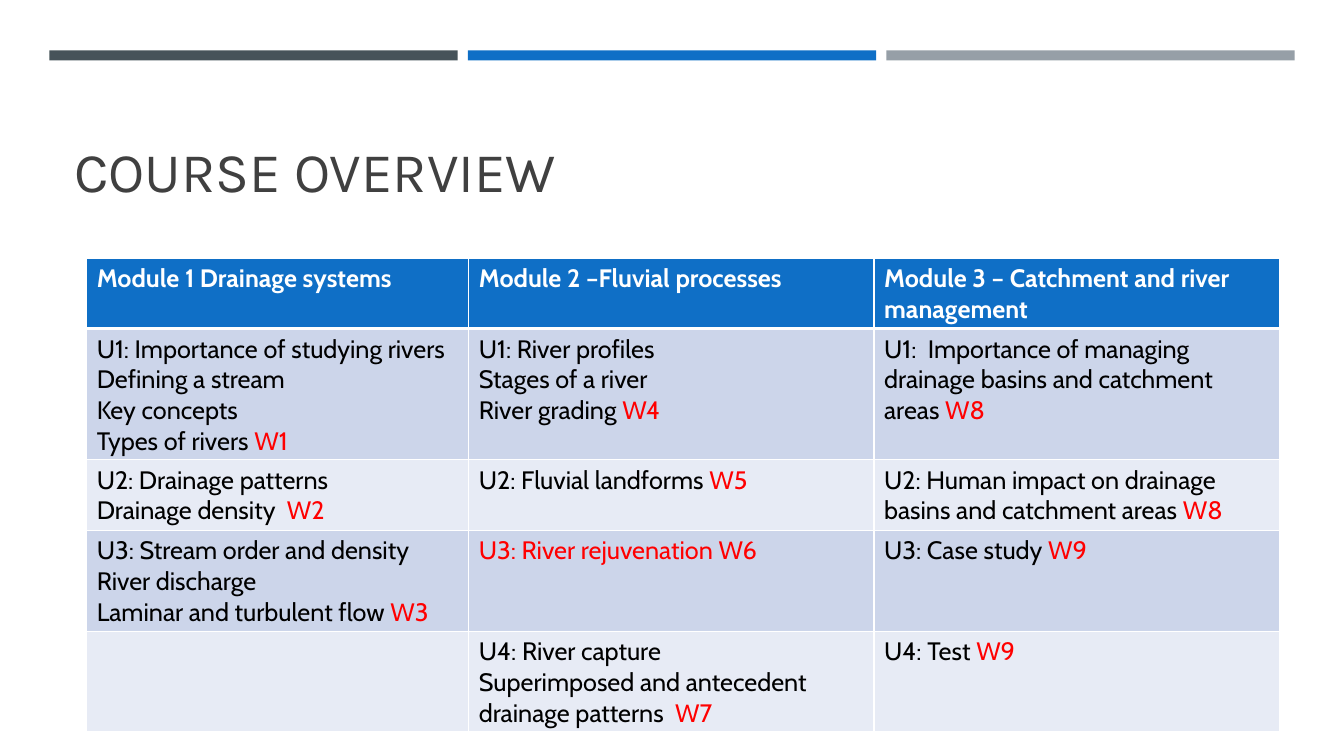
from lxml.etree import SubElement
from pptx import Presentation
from pptx.dml.color import RGBColor
from pptx.enum.shapes import MSO_SHAPE
from pptx.enum.text import MSO_ANCHOR
from pptx.oxml.ns import qn
from pptx.util import Inches, Pt

COLORS = {
    "slate": "465359",
    "blue": "0F6FC6",
    "gray": "969FA7",
    "title": "404040",
    "white": "FFFFFF",
    "black": "000000",
    "red": "FF0000",
    "band dark": "CCD5EA",
    "band light": "E7EBF5",
}

# One list per table row; text after "|" in a line is red.
COURSE_ROWS = [
    ["Module 1 Drainage systems",
     "Module 2 –Fluvial processes",
     "Module 3 – Catchment and river management"],
    ["U1: Importance of studying rivers\nDefining a stream\nKey concepts\nTypes of rivers |W1",
     "U1: River profiles\nStages of a river\nRiver grading |W4",
     "U1:  Importance of managing drainage basins and catchment areas |W8"],
    ["U2: Drainage patterns\nDrainage density  |W2",
     "U2: Fluvial landforms |W5",
     "U2: Human impact on drainage basins and catchment areas |W8"],
    ["U3: Stream order and density\nRiver discharge\nLaminar and turbulent flow |W3",
     "|U3: River rejuvenation W6",
     "U3: Case study |W9"],
    ["",
     "U4: River capture\nSuperimposed and antecedent drainage patterns  |W7",
     "U4: Test |W9"],
]
COLUMN_WIDTHS = [3.79, 4.02, 4.02]


def style_run(run, font_name, size, color, bold=False):
    run.font.name = font_name
    run.font.size = Pt(size)
    run.font.bold = bold
    run.font.color.rgb = RGBColor.from_string(COLORS[color])


def add_borders(cell, bottom_width):
    """Draw white cell borders, 1 pt except for the given bottom or top width."""
    properties = cell._tc.get_or_add_tcPr()
    for side, width in (("L", 1), ("R", 1), ("T", 1), ("B", bottom_width)):
        line = SubElement(properties, qn(f"a:ln{side}"), w=str(Pt(width)))
        fill = SubElement(line, qn("a:solidFill"))
        SubElement(fill, qn("a:srgbClr"), val=COLORS["white"])


presentation = Presentation()
presentation.slide_width = Inches(13.33)
presentation.slide_height = Inches(7.5)
slide = presentation.slides.add_slide(presentation.slide_layouts[6])

# Top bars
for index, color in enumerate(["slate", "blue", "gray"]):
    bar = slide.shapes.add_shape(
        MSO_SHAPE.RECTANGLE, Inches(0.49 + 4.15 * index), Inches(0.5), Inches(4.05), Inches(0.1))
    bar.shadow.inherit = False
    bar.fill.solid()
    bar.fill.fore_color.rgb = RGBColor.from_string(COLORS[color])
    bar.line.fill.background()

# Title
title = slide.shapes.add_textbox(Inches(0.64), Inches(0.77), Inches(12.06), Inches(1.3))
title.text_frame.word_wrap = True
title.text_frame.vertical_anchor = MSO_ANCHOR.BOTTOM
title.text_frame.text = "COURSE OVERVIEW"
style_run(title.text_frame.paragraphs[0].runs[0], "Karla", 40, "title")

# Course table
table_frame = slide.shapes.add_table(
    len(COURSE_ROWS), len(COLUMN_WIDTHS), Inches(0.86), Inches(2.56), Inches(11.83), Inches(4.7))
table = table_frame.table
for column, width in zip(table.columns, COLUMN_WIDTHS):
    column.width = Inches(width)

for row_index, row_texts in enumerate(COURSE_ROWS):
    table.rows[row_index].height = Inches(0.41)  # rows grow with their text
    is_header = row_index == 0
    text_color = "white" if is_header else "black"
    fill_color = "blue" if is_header else ("band light", "band dark")[row_index % 2]
    for column_index, cell_text in enumerate(row_texts):
        cell = table.cell(row_index, column_index)
        add_borders(cell, 3 if is_header else 1)
        cell.fill.solid()
        cell.fill.fore_color.rgb = RGBColor.from_string(COLORS[fill_color])
        cell.text_frame.text = cell_text
        for paragraph in cell.text_frame.paragraphs:
            parts = paragraph.text.split("|")
            paragraph.clear()
            for part, color in zip(parts, (text_color, "red")):
                if part:
                    run = paragraph.add_run()
                    run.text = part
                    style_run(run, "Cabin", 18, color, is_header)
table_frame.height = Inches(4.7)

presentation.save("out.pptx")
